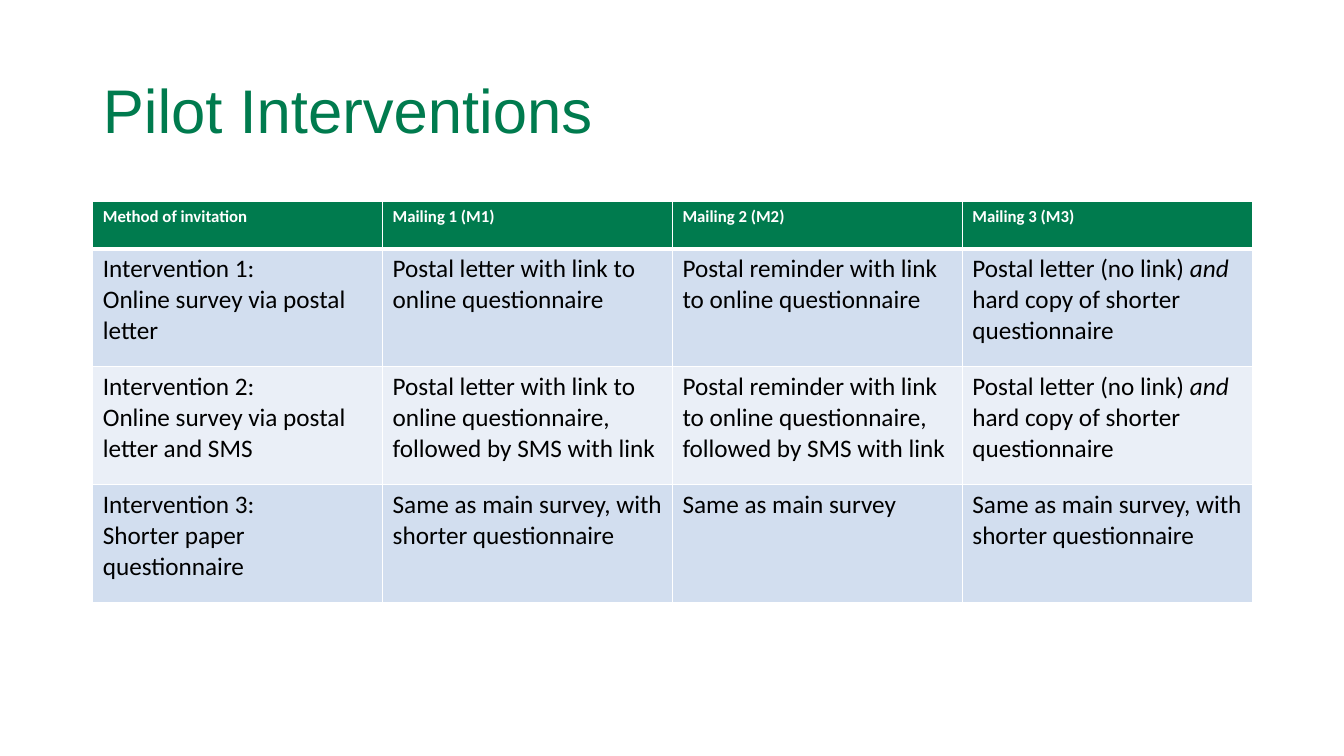
import pptx
import pptx.util
import pptx.dml.color
import pptx.enum.text
import pptx.oxml
import pptx.oxml.ns

Inches, Pt = pptx.util.Inches, pptx.util.Pt
RGB = pptx.dml.color.RGBColor

GREEN = RGB(0x00, 0x7B, 0x4E)
WHITE = RGB(0xFF, 0xFF, 0xFF)
BLACK = RGB(0x00, 0x00, 0x00)
BANDS = [RGB(0xD2, 0xDE, 0xEF), RGB(0xEA, 0xEF, 0xF7)]

# Line breaks start a paragraph; words between asterisks are italic.
TITLE = "Pilot Interventions"
ROWS = [
    ["Method of invitation", "Mailing 1 (M1)", "Mailing 2 (M2)", "Mailing 3 (M3)"],
    ["Intervention 1:\nOnline survey via postal letter",
     "Postal letter with link to online questionnaire",
     "Postal reminder with link to online questionnaire",
     "Postal letter (no link) *and* hard copy of shorter questionnaire"],
    ["Intervention 2:\nOnline survey via postal letter and SMS",
     "Postal letter with link to online questionnaire, followed by SMS with link",
     "Postal reminder with link to online questionnaire, followed by SMS with link",
     "Postal letter (no link) *and*\nhard copy of shorter questionnaire"],
    ["Intervention 3:\nShorter paper questionnaire",
     "Same as main survey, with shorter questionnaire",
     "Same as main survey",
     "Same as main survey, with shorter questionnaire"],
]
LEFT, WIDTH = 0.92, 11.5
TOP, HEAD, BODY = 2, 0.47, 1.17


def write(frame, text, size, color, font="Calibri", bold=False, space=None):
    for i, line in enumerate(text.split("\n")):
        para = frame.add_paragraph() if i else frame.paragraphs[0]
        para.line_spacing = space
        for j, part in enumerate(line.split("*")):
            if not part:
                continue
            run = para.add_run()
            run.text = part
            run.font.size = Pt(size)
            run.font.name = font
            run.font.bold = bold
            run.font.italic = j % 2 == 1
            run.font.color.rgb = color


def edge(cell, **widths):
    """Draw white cell borders; widths in points by side, in the order L, R, T, B."""
    props = cell._tc.get_or_add_tcPr()
    for i, (side, width) in enumerate(widths.items()):
        props.insert(i, pptx.oxml.parse_xml(
            f'<a:ln{side} {pptx.oxml.ns.nsdecls("a")} w="{Pt(width)}">'
            f'<a:solidFill><a:srgbClr val="{WHITE}"/></a:solidFill></a:ln{side}>'))


def main():
    deck = pptx.Presentation()
    deck.slide_width, deck.slide_height = Inches(13.33), Inches(7.5)
    slide = deck.slides.add_slide(deck.slide_layouts[5])

    title = slide.shapes.title
    title.left, title.top = Inches(LEFT), Inches(0.4)
    title.width, title.height = Inches(WIDTH), Inches(1.45)
    frame = title.text_frame
    frame.vertical_anchor = pptx.enum.text.MSO_ANCHOR.MIDDLE
    write(frame, TITLE, 44, GREEN, font="Arial", space=0.9)
    frame.paragraphs[0].alignment = pptx.enum.text.PP_ALIGN.LEFT

    count = len(ROWS[0])
    high = HEAD + BODY * (len(ROWS) - 1)
    table = slide.shapes.add_table(len(ROWS), count, Inches(LEFT), Inches(TOP),
                                   Inches(WIDTH), Inches(high)).table
    for col in table.columns:
        col.width = Inches(WIDTH / count)
    for r, row in enumerate(ROWS):
        head = r == 0
        table.rows[r].height = Inches(HEAD if head else BODY)
        for c, text in enumerate(row):
            cell = table.cell(r, c)
            cell.fill.solid()
            cell.fill.fore_color.rgb = GREEN if head else BANDS[(r - 1) % 2]
            edge(cell, L=1, R=1, T=3 if r == 1 else 1, B=3 if head else 1)
            write(cell.text_frame, text, 12 if head else 18,
                  WHITE if head else BLACK, bold=head)

    deck.save("out.pptx")


if __name__ == "__main__":
    main()
